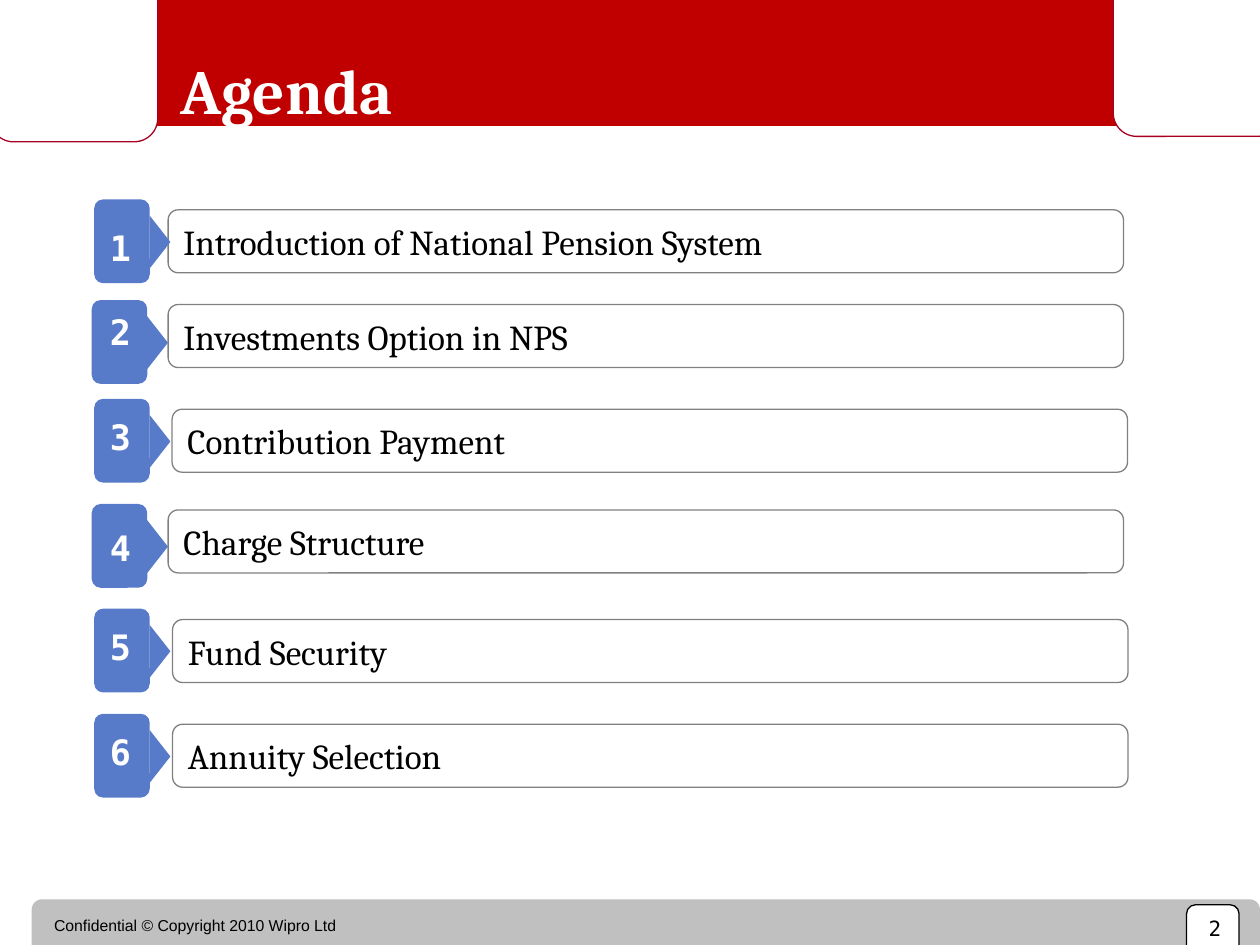
from pptx import Presentation
from pptx.dml.color import RGBColor
from pptx.enum.shapes import MSO_SHAPE
from pptx.enum.text import MSO_ANCHOR, PP_ALIGN
from pptx.util import Cm, Pt

ROUND = MSO_SHAPE.ROUNDED_RECTANGLE
ARROW = MSO_SHAPE.ISOSCELES_TRIANGLE
LEFT, CENTER, RIGHT = PP_ALIGN.LEFT, PP_ALIGN.CENTER, PP_ALIGN.RIGHT
TOP, MIDDLE = MSO_ANCHOR.TOP, MSO_ANCHOR.MIDDLE
SERIF, MONO = "Cambria", "DejaVu Sans Mono"
RED, BLUE, GREY, WHITE, BLACK = "C00000", "577AC9", "C0C0C0", "FFFFFF", "000000"
color = RGBColor.from_string

deck = Presentation()
deck.slide_width, deck.slide_height = Cm(25.4), Cm(19.05)
slide = deck.slides.add_slide(deck.slide_layouts[6])
shapes = slide.shapes


def add_box(kind, x, y, w, h, fill, line=None, round=None, turn=0):
    """Add a filled shape; places are in cm, the outline is optional."""
    box = shapes.add_shape(kind, Cm(x), Cm(y), Cm(w), Cm(h))
    box.shadow.inherit = False
    box.rotation = turn
    if round:
        box.adjustments[0] = round
    box.fill.solid()
    box.fill.fore_color.rgb = color(fill)
    if line:
        box.line.color.rgb = color(line)
        box.line.width = Pt(0.75)
    else:
        box.line.fill.background()
    return box


def set_text(box, text, size, name, ink, bold=False, align=LEFT, anchor=TOP, wrap=True):
    frame = box.text_frame
    frame.word_wrap = wrap
    frame.vertical_anchor = anchor
    para = frame.paragraphs[0]
    para.text = text
    para.alignment = align
    font = para.runs[0].font
    font.size, font.name, font.bold = Pt(size), name, bold
    font.color.rgb = color(ink)
    return para


# Header band, footer band and page tab
add_box(ROUND, 0.64, -0.53, 25.2, 3.07, RED, round=0.14)
add_box(ROUND, 0.64, 18.13, 24.76, 1.47, GREY, round=0.14)
note = shapes.add_textbox(Cm(0.84), Cm(18.42), Cm(10.31), Cm(0.41))
para = set_text(note, "Confidential © Copyright 2010 Wipro Ltd", 9, "Arial", BLACK)
para.line_spacing = 0.75
add_box(ROUND, 23.92, 18.24, 1.06, 1.24, WHITE, BLACK, 0.17)
page = shapes.add_textbox(Cm(23.7), Cm(18.34), Cm(1.17), Cm(0.58))
set_text(page, "2", 12, MONO, BLACK, align=RIGHT)

# White corners over the header
for x, y in ((22.38, -0.69), (-0.26, -0.58)):
    add_box(ROUND, x, y, 3.5, 3.38, WHITE, "A50021", 0.14, 90)

title = shapes.add_textbox(Cm(3.39), Cm(0.43), Cm(17.98), Cm(2.74))
set_text(title, "Agenda", 36, SERIF, WHITE, True, anchor=MIDDLE)

# Topic, bar left and top, tab left and top, number top
ROWS = (
    ("Introduction of National Pension System", 3.39, 4.23, 1.9, 4.02, 4.45),
    ("Investments Option in NPS", 3.39, 6.14, 1.85, 6.05, 6.14),
    ("Contribution Payment", 3.47, 8.25, 1.9, 8.04, 8.26),
    ("Charge Structure", 3.39, 10.28, 1.85, 10.16, 10.49),
    ("Fund Security", 3.48, 12.49, 1.9, 12.27, 12.49),
    ("Annuity Selection", 3.48, 14.6, 1.9, 14.39, 14.6),
)
for num, (topic, bar_x, bar_y, tab_x, tab_y, num_y) in enumerate(ROWS, 1):
    bar = add_box(ROUND, bar_x, bar_y, 19.26, 1.27, WHITE, "808080", 0.16)
    set_text(bar, topic, 20, SERIF, BLACK, anchor=MIDDLE, wrap=False)
    add_box(ROUND, tab_x, tab_y, 1.12, 1.69, BLUE, round=0.16)
    add_box(ARROW, tab_x + 0.79, tab_y + 0.65, 1.07, 0.42, BLUE, turn=90)
    label = shapes.add_textbox(Cm(1.69), Cm(num_y), Cm(1.48), Cm(1.09))
    set_text(label, str(num), 20, MONO, WHITE, True, CENTER)

deck.save("out.pptx")
